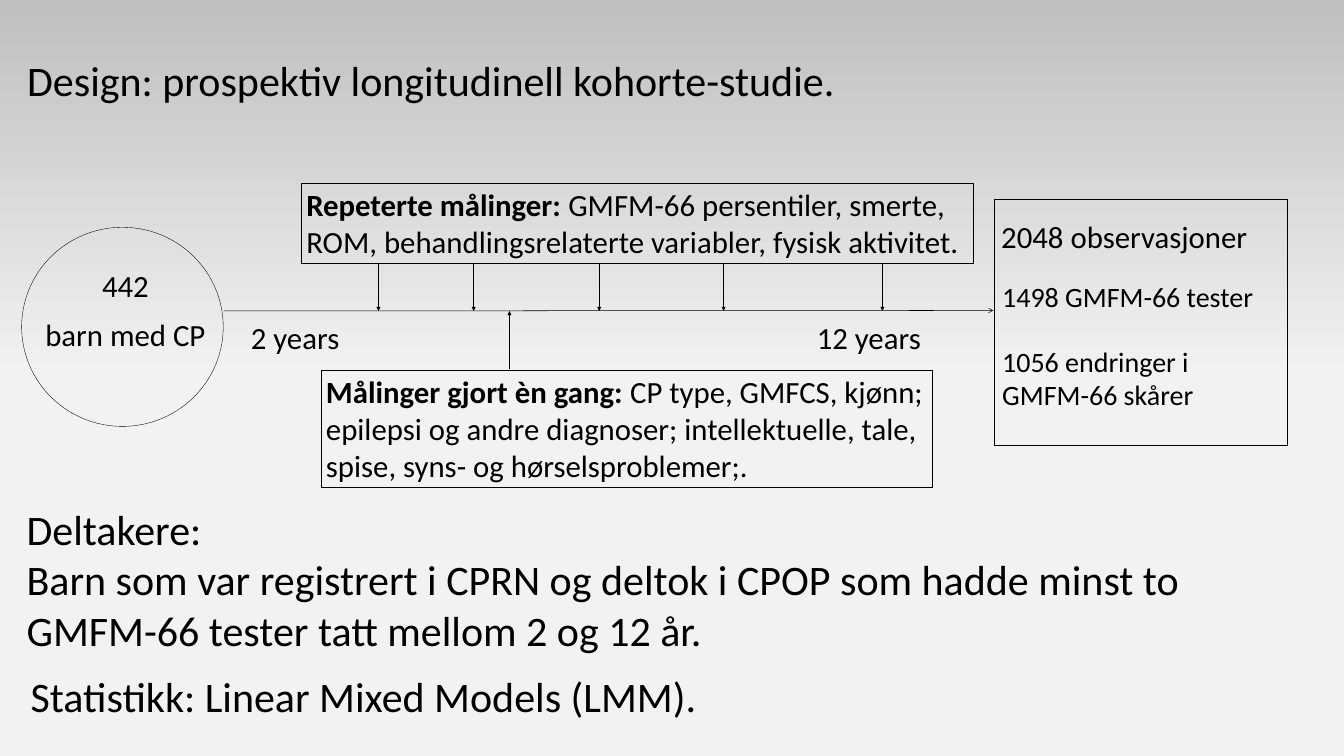
from copy import deepcopy
from dataclasses import dataclass

from lxml import etree
from pptx import Presentation
from pptx.dml.color import RGBColor
from pptx.enum import shapes, text
from pptx.oxml.ns import qn
from pptx.util import Pt

PX = 9144  # EMU per px, 100 px to the inch
BLACK = RGBColor(0x00, 0x00, 0x00)
GREY = RGBColor(0xBF, 0xBF, 0xBF)
PALE = RGBColor(0xF2, 0xF2, 0xF2)
FONT = "Calibri"
HEADING, LABEL, SMALL = 60, 44, 40  # text sizes in points

Run = tuple[str, bool]  # wording, bold


@dataclass(frozen=True)
class Box:
    left: int
    top: int
    width: int
    height: int


@dataclass(frozen=True)
class TextBlock:
    box: Box
    paragraphs: list[list[Run]]
    size: int
    centred: bool = False
    spaced: bool = False
    wrap: bool = True


@dataclass(frozen=True)
class Arrow:
    x1: int
    y1: int
    x2: int
    y2: int
    head: str = "triangle"


def place(box: Box) -> list[int]:
    return [n * PX for n in (box.left, box.top, box.width, box.height)]


def plain(*lines: str) -> list[list[Run]]:
    return [[(line, False)] for line in lines]


def paint_background(slide) -> None:
    fill = slide.background.fill
    fill.gradient()
    fill.gradient_angle = 270
    stops = slide._element.find(".//" + qn("a:gsLst"))
    stops.append(deepcopy(stops[-1]))
    for stop, position, colour in zip(fill.gradient_stops, (0, 0.5, 1), (GREY, PALE, PALE)):
        stop.position = position
        stop.color.rgb = colour


def write(sp, block: TextBlock) -> None:
    tf = sp.text_frame
    tf.word_wrap = block.wrap
    tf.vertical_anchor = text.MSO_ANCHOR.TOP
    for i, runs in enumerate(block.paragraphs):
        p = tf.add_paragraph() if i else tf.paragraphs[0]
        p.alignment = text.PP_ALIGN.CENTER if block.centred else text.PP_ALIGN.LEFT
        if block.spaced:
            p.line_spacing = 1.15
            p.space_after = Pt(10)
        for wording, bold in runs:
            r = p.add_run()
            r.text = wording
            r.font.name = FONT
            r.font.size = Pt(block.size)
            r.font.bold = bold
            r.font.color.rgb = BLACK


def add_text(slide, block: TextBlock) -> None:
    write(slide.shapes.add_textbox(*place(block.box)), block)


def add_outline(slide, kind: shapes.MSO_SHAPE, box: Box, weight: float = 0.75):
    sp = slide.shapes.add_shape(kind, *place(box))
    sp.shadow.inherit = False
    sp.fill.background()
    sp.line.color.rgb = BLACK
    sp.line.width = Pt(weight)
    return sp


def add_arrow(slide, arrow: Arrow) -> None:
    ends = [n * PX for n in (arrow.x1, arrow.y1, arrow.x2, arrow.y2)]
    line = slide.shapes.add_connector(shapes.MSO_CONNECTOR.STRAIGHT, *ends)
    line.line.color.rgb = BLACK
    line.line.width = Pt(0.75)
    etree.SubElement(line.line._get_or_add_ln(), qn("a:tailEnd"), type=arrow.head)
    etree.SubElement(line._element.spPr, qn("a:effectLst"))


HEADINGS = [
    TextBlock(Box(44, 104, 2289, 111),
              plain("Design: prospektiv longitudinell kohorte-studie."), HEADING),
    TextBlock(Box(43, 994, 2566, 313),
              plain("Deltakere:",
                    "Barn som var registrert i CPRN og deltok i CPOP som hadde minst to "
                    "GMFM-66 tester tatt mellom 2 og 12 år."), HEADING),
    TextBlock(Box(51, 1326, 1920, 111),
              plain("Statistikk: Linear Mixed Models (LMM)."), HEADING),
]

MEASUREMENTS = [
    TextBlock(Box(598, 364, 1334, 158),
              [[("Repeterte målinger:", True),
                (" GMFM-66 persentiler, smerte, ROM, behandlingsrelaterte variabler, "
                 "fysisk aktivitet.", False)]], LABEL),
    TextBlock(Box(637, 734, 1213, 232),
              [[("Målinger gjort èn gang: ", True),
                ("CP type, GMFCS, kjønn; epilepsi og andre diagnoser; intellektuelle, tale, "
                 "spise, syns- og hørselsproblemer;.", False)]], LABEL),
]

LABELS = [
    TextBlock(Box(55, 513, 388, 226), plain("442", "barn med CP"), LABEL,
              centred=True, spaced=True),
    TextBlock(Box(488, 627, 242, 84), plain("2 years"), LABEL),
    TextBlock(Box(1611, 627, 242, 84), plain("12 years"), LABEL),
    TextBlock(Box(1977, 417, 614, 90), plain("2048 observasjoner"), LABEL, spaced=True),
    TextBlock(Box(1979, 550, 523, 77), plain("1498 GMFM-66 tester"), SMALL, wrap=False),
    TextBlock(Box(1979, 678, 523, 145), plain("1056 endringer i GMFM-66 skårer"), SMALL),
]

AXIS_Y = 617
REPEATED_X = (751, 940, 1189, 1436, 1751)
ARROWS = [
    Arrow(444, AXIS_Y, 1971, AXIS_Y - 1, "arrow"),
    Arrow(1011, 732, 1011, AXIS_Y),
    *(Arrow(x, 522, x, AXIS_Y) for x in REPEATED_X),
]


def main() -> None:
    prs = Presentation()
    prs.slide_width, prs.slide_height = 2667 * PX, 1500 * PX
    slide = prs.slides.add_slide(prs.slide_layouts[6])
    paint_background(slide)

    # Headings and body text
    for block in HEADINGS:
        add_text(slide, block)

    # Cohort circle, measurement boxes and results frame
    add_outline(slide, shapes.MSO_SHAPE.OVAL, Box(43, 451, 400, 395), 0.5)
    for block in MEASUREMENTS:
        write(add_outline(slide, shapes.MSO_SHAPE.RECTANGLE, block.box), block)
    add_outline(slide, shapes.MSO_SHAPE.RECTANGLE, Box(1974, 396, 580, 488))

    # Timeline with its measurement arrows
    for arrow in ARROWS:
        add_arrow(slide, arrow)

    # Labels in the diagram
    for block in LABELS:
        add_text(slide, block)

    prs.save("out.pptx")


if __name__ == "__main__":
    main()
